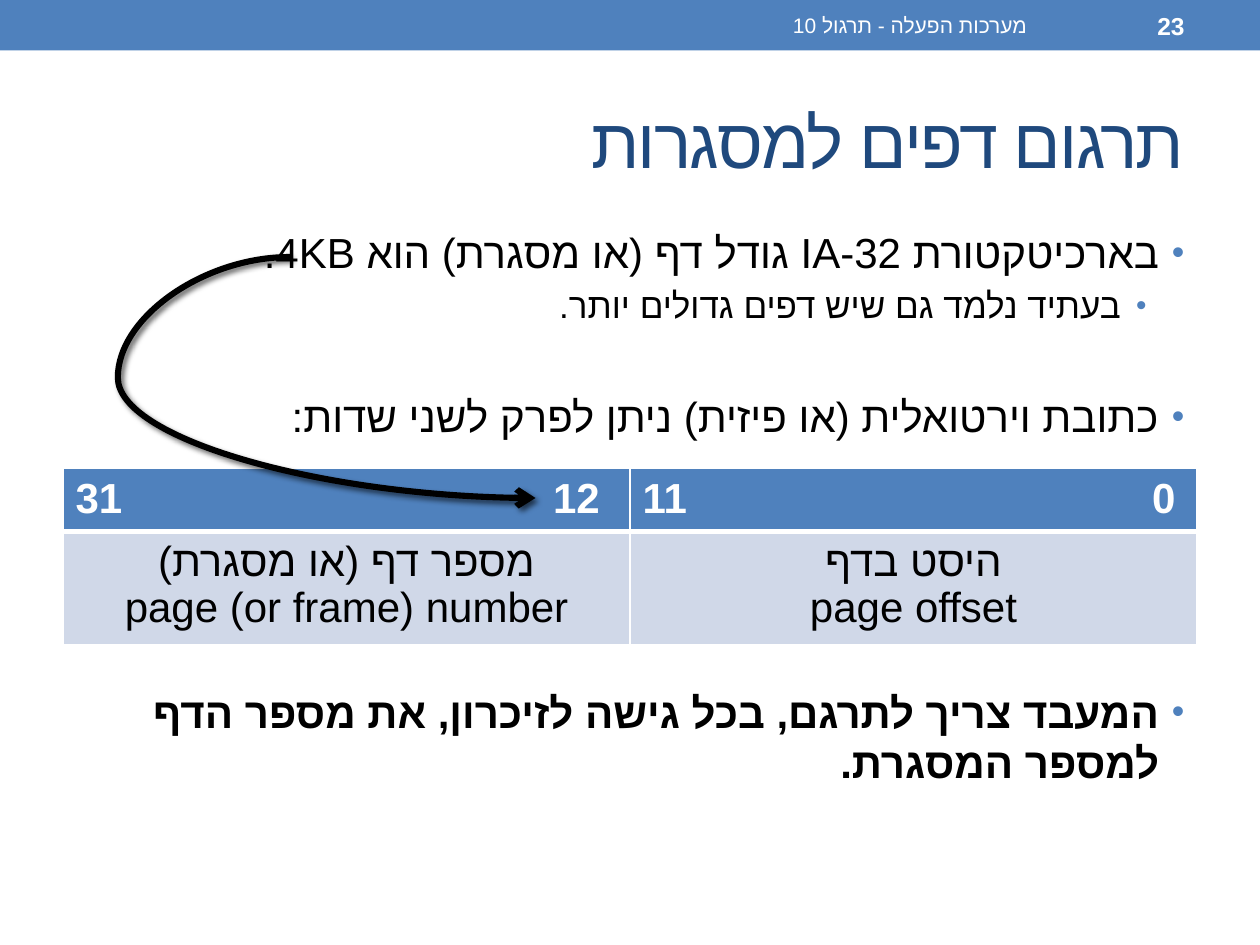
from dataclasses import dataclass

from lxml import etree
from pptx import Presentation
from pptx.dml.color import RGBColor
from pptx.enum.shapes import MSO_CONNECTOR, MSO_SHAPE
from pptx.enum.text import MSO_ANCHOR, MSO_AUTO_SIZE, PP_ALIGN
from pptx.oxml import parse_xml
from pptx.oxml.ns import nsdecls, qn
from pptx.util import Emu, Inches, Pt

RIGHT, CENTER = PP_ALIGN.RIGHT, PP_ALIGN.CENTER
MIDDLE = MSO_ANCHOR.MIDDLE
CURVE = MSO_CONNECTOR.CURVE
RECT = MSO_SHAPE.RECTANGLE

BLUE = RGBColor(0x4F, 0x81, 0xBD)
NAVY = RGBColor(0x1F, 0x49, 0x7D)
PALE = RGBColor(0xD0, 0xD8, 0xE8)
WHITE = RGBColor(0xFF, 0xFF, 0xFF)
BLACK = RGBColor(0, 0, 0)
FONT = "Arial"

WIDTH, HEIGHT = Inches(10), Inches(7.5)
MARGIN = 0.05
CONTENT = 1 - 2 * MARGIN


@dataclass
class Bullet:
    text: str
    size: int = 24
    level: int = 0
    before: float = 4.8
    bold: bool = False


@dataclass
class Field:
    high: str
    low: str
    low_tab: float
    names: tuple[str, str]


BULLETS = [
    Bullet("בארכיטקטורת IA-32 גודל דף (או מסגרת) הוא 4KB."),
    Bullet("בעתיד נלמד גם שיש דפים גדולים יותר.", size=20, level=1, before=4),
    Bullet("כתובת וירטואלית (או פיזית) ניתן לפרק לשני שדות:", before=37),
    Bullet("המעבד צריך לתרגם, בכל גישה לזיכרון, את מספר הדף למספר המסגרת.",
           before=140, bold=True),
]
FIELDS = [
    Field("31", "12", 4.16, ("מספר דף (או מסגרת)", "page (or frame) number")),
    Field("11", "0", 4.23, ("היסט בדף", "page offset")),
]


def share(x: float, y: float) -> tuple[Emu, Emu]:
    return Emu(round(WIDTH * x)), Emu(round(HEIGHT * y))


def place(s, x: float, y: float, w: float, h: float) -> None:
    s.left, s.top = share(x, y)
    s.width, s.height = share(w, h)


def add_run(p, text: str, size: float, color: RGBColor, bold: bool = False):
    r = p.add_run()
    r.text = text
    r.font.name = FONT
    r.font.size = Pt(size)
    r.font.bold = bold
    r.font.color.rgb = color
    etree.SubElement(r.font._element, qn("a:cs")).set("typeface", FONT)
    return r


def set_rtl(p) -> None:
    p.alignment = RIGHT
    p._p.get_or_add_pPr().set("rtl", "1")


def add_bar(slide) -> None:
    s = slide.shapes.add_shape(RECT, 0, 0, *share(1, 0.0533))
    s.shadow.inherit = False
    s.fill.solid()
    s.fill.fore_color.rgb = BLUE
    s.line.fill.background()


def add_bar_text(slide, text: str, x: float, w: float, size: int, bold: bool) -> None:
    tf = slide.shapes.add_textbox(*share(x, 0.003), *share(w, 0.048)).text_frame
    tf.word_wrap = True
    tf.vertical_anchor = MIDDLE
    p = tf.paragraphs[0]
    set_rtl(p)
    add_run(p, text, size, WHITE, bold)


def fill_title(s, text: str) -> None:
    place(s, MARGIN, 0.077, CONTENT, 0.144)
    s.text_frame.auto_size = MSO_AUTO_SIZE.NONE
    s.text_frame.vertical_anchor = MIDDLE
    p = s.text_frame.paragraphs[0]
    set_rtl(p)
    add_run(p, text, 40, NAVY).font._element.set("spc", "-100")


def fill_body(s, bullets: list[Bullet]) -> None:
    place(s, MARGIN, 0.233, CONTENT, 0.711)
    tf = s.text_frame
    tf.auto_size = MSO_AUTO_SIZE.NONE
    for i, b in enumerate(bullets):
        p = tf.add_paragraph() if i else tf.paragraphs[0]
        p.level = b.level
        set_rtl(p)
        p.space_before = Pt(b.before)
        pPr = p._p.get_or_add_pPr()
        pPr.set("marL", str(Inches(0.2 + 0.3 * b.level)))
        pPr.set("indent", str(Inches(-0.2)))
        for xml in (f'<a:buClr {nsdecls("a")}><a:srgbClr val="{BLUE}"/></a:buClr>',
                    f'<a:buSzPct {nsdecls("a")} val="85000"/>',
                    f'<a:buFont {nsdecls("a")} typeface="{FONT}"/>',
                    f'<a:buChar {nsdecls("a")} char="•"/>'):
            pPr.append(parse_xml(xml))
        add_run(p, b.text, b.size, BLACK, b.bold)


def style_cell(cell, color: RGBColor, bottom: float) -> None:
    tcPr = cell._tc.get_or_add_tcPr()
    for tag, width in (("lnL", 1), ("lnR", 1), ("lnT", 1), ("lnB", bottom)):
        tcPr.append(parse_xml(
            f'<a:{tag} {nsdecls("a")} w="{Pt(width)}"><a:solidFill>'
            f'<a:srgbClr val="{WHITE}"/></a:solidFill></a:{tag}>'))
    cell.fill.solid()
    cell.fill.fore_color.rgb = color


def add_address_table(slide, fields: list[Field]) -> None:
    table = slide.shapes.add_table(
        2, len(fields), *share(MARGIN, 0.496), *share(CONTENT, 0.17)).table
    table.rows[0].height, table.rows[1].height = Inches(0.46), Inches(0.82)
    for col, field in enumerate(fields):
        head, body = table.cell(0, col), table.cell(1, col)
        style_cell(head, BLUE, 3)
        style_cell(body, PALE, 1)
        p = head.text_frame.paragraphs[0]
        p._p.get_or_add_pPr().append(parse_xml(
            f'<a:tabLst {nsdecls("a")}>'
            f'<a:tab pos="{Inches(field.low_tab)}" algn="r"/></a:tabLst>'))
        add_run(p, f"{field.high}\t{field.low}", 24, WHITE, True)
        tf = body.text_frame
        for i, name in enumerate(field.names):
            p = tf.add_paragraph() if i else tf.paragraphs[0]
            p.alignment = CENTER
            add_run(p, name, 24, BLACK)


def add_curved_arrow(slide, start: tuple[float, float], end: tuple[float, float],
                     bend: float) -> None:
    s = slide.shapes.add_connector(CURVE, *share(*start), *share(*end))
    s.line.color.rgb = BLACK
    s.line.width = Pt(3.5)
    spPr = s._element.spPr
    avLst = spPr.find(qn("a:prstGeom")).get_or_add_avLst()
    etree.SubElement(avLst, qn("a:gd"), name="adj1", fmla=f"val {round(bend * 100000)}")
    etree.SubElement(s.line._get_or_add_ln(), qn("a:tailEnd"), type="arrow")
    spPr.append(parse_xml(
        f'<a:effectLst {nsdecls("a")}>'
        f'<a:outerShdw blurRad="{Pt(3)}" dist="{Pt(2)}" dir="2700000">'
        f'<a:srgbClr val="{BLACK}"><a:alpha val="60000"/></a:srgbClr>'
        f'</a:outerShdw></a:effectLst>'))


def main() -> None:
    prs = Presentation()
    prs.slide_width, prs.slide_height = WIDTH, HEIGHT
    slide = prs.slides.add_slide(prs.slide_layouts[1])
    add_bar(slide)
    fill_title(slide.shapes.title, "תרגום דפים למסגרות")
    fill_body(slide.placeholders[1], BULLETS)
    add_bar_text(slide, "מערכות הפעלה - תרגול 10", 0.375, 0.45, 12, False)
    add_bar_text(slide, "23", 0.833, 0.117, 14, True)
    add_address_table(slide, FIELDS)
    add_curved_arrow(slide, (0.23, 0.272), (0.425, 0.527), -0.7)
    prs.save("out.pptx")


if __name__ == "__main__":
    main()
